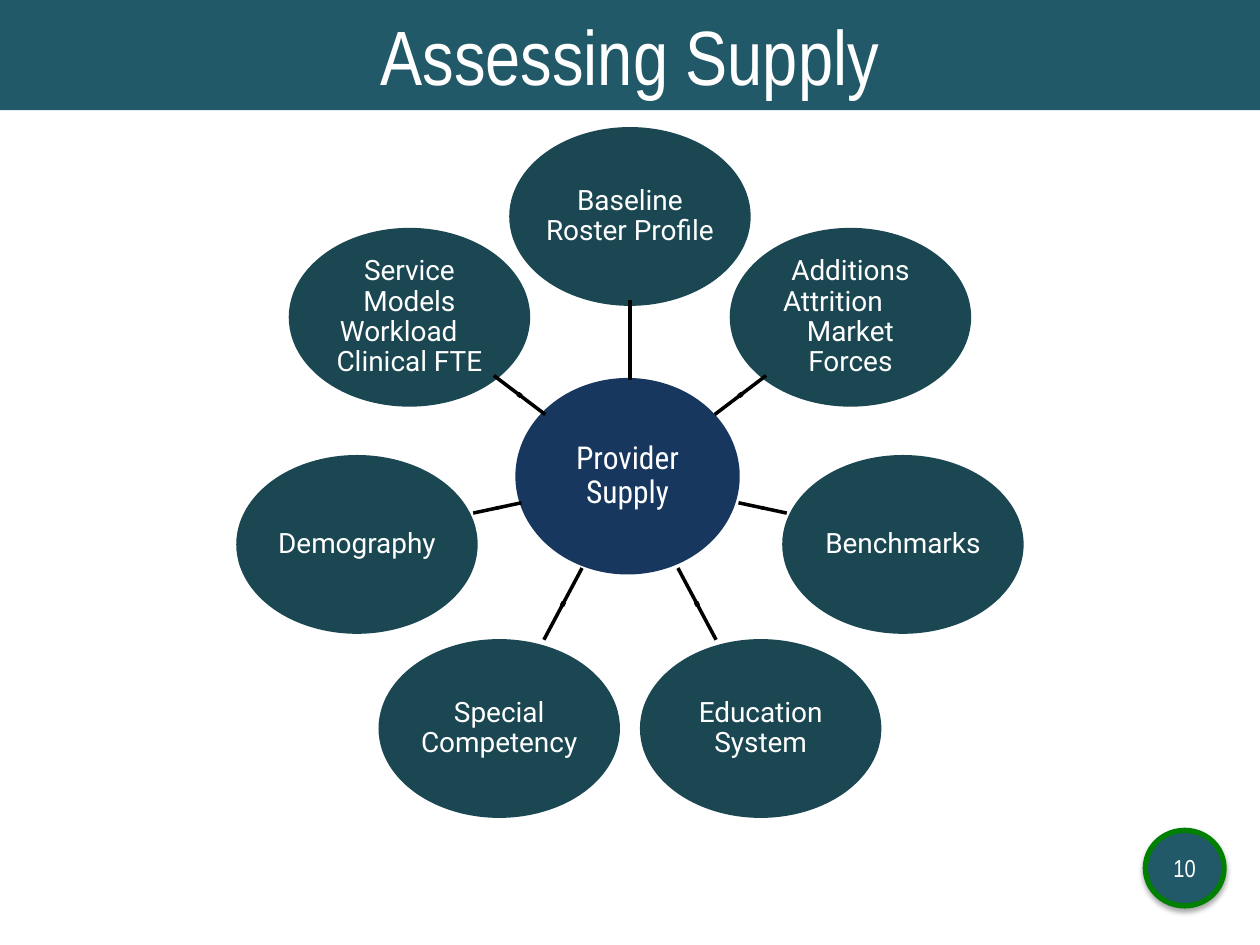
from math import atan2, degrees
from lxml import etree
from pptx import Presentation
from pptx.dml.color import RGBColor
from pptx.enum.shapes import MSO_CONNECTOR, MSO_SHAPE
from pptx.enum.text import MSO_ANCHOR, PP_ALIGN
from pptx.oxml.ns import qn
from pptx.util import Pt

TEAL, DARK_TEAL, NAVY = "215968", "1B4752", "17375E"
CENTER_X = 360


def rgb(color):
    return RGBColor.from_string(color)


def add_label(kind, x, y, w, h, fill, lines, size, font, spacing=1.0):
    """Add a filled shape; each line is (text, left indent or None to centre)."""
    sp = s.shapes.add_shape(kind, Pt(x), Pt(y), Pt(w), Pt(h))
    sp.shadow.inherit = False
    sp.fill.solid()
    sp.fill.fore_color.rgb = rgb(fill)
    sp.line.fill.background()
    tf = sp.text_frame
    tf.word_wrap = True
    tf.vertical_anchor = MSO_ANCHOR.MIDDLE
    tf.margin_left = tf.margin_right = tf.margin_top = tf.margin_bottom = 0
    for i, (text, indent) in enumerate(lines):
        p = tf.add_paragraph() if i else tf.paragraphs[0]
        p.line_spacing = spacing
        p.alignment = PP_ALIGN.CENTER
        if indent is not None:
            p.alignment = PP_ALIGN.LEFT
            p._p.get_or_add_pPr().set("marL", str(Pt(indent)))
        r = p.add_run()
        r.text = text
        r.font.size = Pt(size)
        r.font.name = font
        r.font.color.rgb = rgb("FFFFFF")
    return sp


prs = Presentation()
prs.slide_width, prs.slide_height = Pt(720), Pt(540)
s = prs.slides.add_slide(prs.slide_layouts[6])

# Title band
add_label(MSO_SHAPE.RECTANGLE, 0, 0, 720, 63, TEAL,
          [("Assessing Supply", None)], 44, "Arial Narrow")

# Page number badge with a soft shadow
badge = add_label(MSO_SHAPE.OVAL, 654.5, 474.5, 45, 43.2, TEAL,
                  [("10", None)], 14, "Arial Narrow")
badge.line.color.rgb = rgb("008000")
badge.line.width = Pt(3)
effects = badge._element.spPr.find(qn("a:effectLst"))
shadow = etree.SubElement(effects, qn("a:outerShdw"), blurRad=str(Pt(3.1)),
                          dist=str(Pt(1.8)), dir="5400000", rotWithShape="0")
shade = etree.SubElement(shadow, qn("a:srgbClr"), val="000000")
etree.SubElement(shade, qn("a:alpha"), val="35000")

# Hub
add_label(MSO_SHAPE.OVAL, 294.5, 216, 128.2, 112.3, NAVY,
          [("Provider Supply", None)], 18, "Roboto Condensed", 0.9)

# Factors around the hub: centre offset from the axis, top, lines
W, H = 138, 102.2
factors = [
    (0, 72.6, [("Baseline Roster Profile", None)]),
    (126, 130.2, [("Additions", None), ("Attrition", 10.3),
                  ("Market", None), ("Forces", None)]),
    (156, 260, [("Benchmarks", None)]),
    (74.7, 365.2, [("Education System", None)]),
    (-74.7, 365.2, [("Special Competency", None)]),
    (-156, 260, [("Demography", None)]),
    (-126, 130.2, [("Service", None), ("Models", None),
                   ("Workload", 9.1), ("Clinical FTE", None)]),
]
for dx, top, lines in factors:
    add_label(MSO_SHAPE.OVAL, CENTER_X + dx - W / 2, top, W, H, DARK_TEAL,
              lines, 16, "Roboto", 0.9)

# Spokes, mirrored about the axis: inner dx, y, outer dx, y, midpoint mark size
right_spokes = [
    (48.4, 236.9, 77.8, 214.6, 2),
    (62, 287.3, 89.6, 293.2, 1.4),
    (27.4, 324.6, 49.2, 365.6, 2),
]
spokes = [(0, 217.4, 0, 171.4, 0)]
for x1, y1, x2, y2, mark in right_spokes:
    spokes += [(x1, y1, x2, y2, mark), (-x1, y1, -x2, y2, mark)]

for x1, y1, x2, y2, mark in spokes:
    line = s.shapes.add_connector(MSO_CONNECTOR.STRAIGHT, Pt(CENTER_X + x1), Pt(y1),
                                  Pt(CENTER_X + x2), Pt(y2))
    line.line.color.rgb = rgb("000000")
    line.line.width = Pt(2)
    etree.SubElement(line._element.spPr, qn("a:effectLst"))
    if mark:
        sp = s.shapes.add_shape(
            MSO_SHAPE.RECTANGLE, Pt(CENTER_X + (x1 + x2 - mark) / 2),
            Pt((y1 + y2 - mark) / 2), Pt(mark), Pt(mark))
        sp.rotation = degrees(atan2(y2 - y1, x2 - x1)) % 360
        sp.shadow.inherit = False
        sp.fill.background()
        sp.line.color.rgb = rgb("000000")
        sp.line.width = Pt(0.75)

prs.save("out.pptx")
